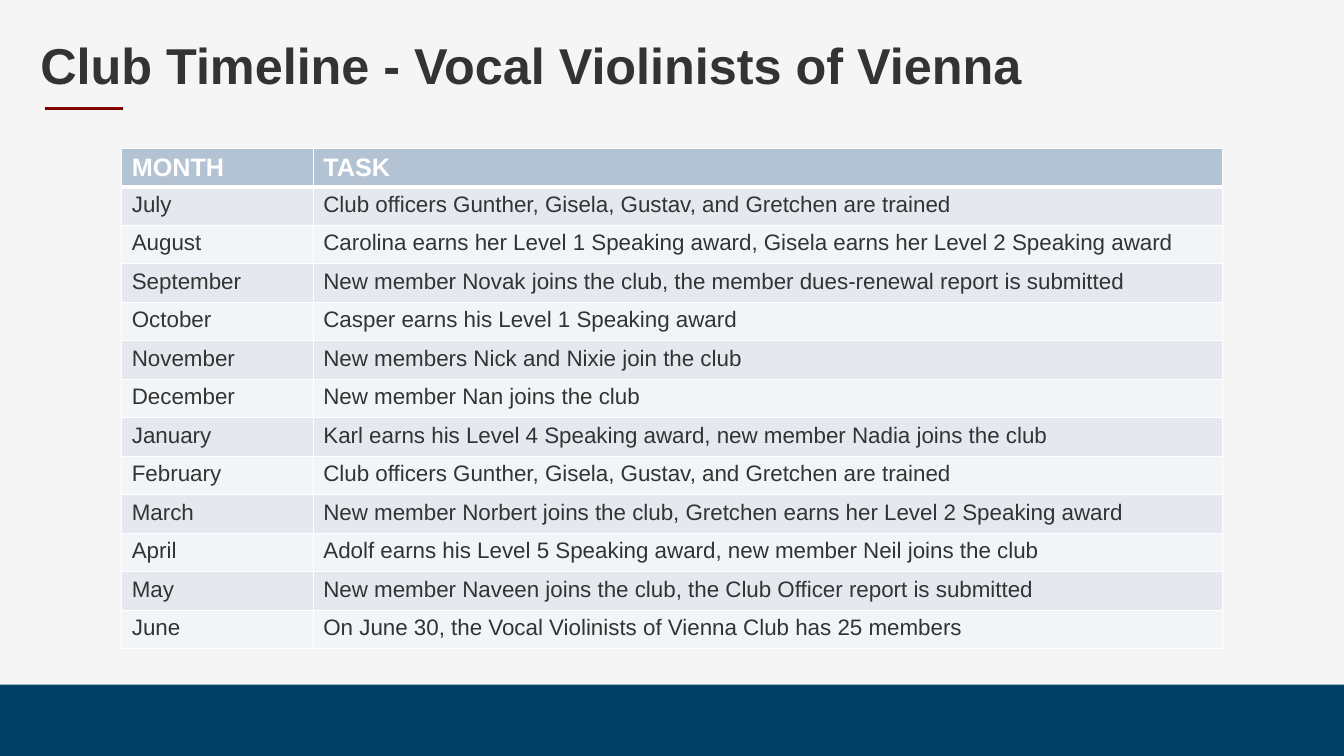
"""Build the club timeline slide."""
from lxml import etree
from pptx import Presentation
from pptx import util as u
from pptx.dml.color import RGBColor
from pptx.enum import shapes, text
from pptx.oxml import ns

PAPER = RGBColor(0xF5, 0xF5, 0xF5)
NAVY = RGBColor(0x00, 0x41, 0x65)
MAROON = RGBColor(0x80, 0x00, 0x00)
INK = RGBColor(0x33, 0x33, 0x33)
WHITE = RGBColor(0xFF, 0xFF, 0xFF)
HEADER_FILL = RGBColor(0xB3, 0xC3, 0xD3)
BAND_FILLS = (RGBColor(0xF2, 0xF5, 0xF7), RGBColor(0xE5, 0xE9, 0xEF))
FONT = "Arial"
PAGE_WIDTH, PAGE_HEIGHT = 960, 540
COLUMN_WIDTHS = (136.8, 649.4)
ROW_HEIGHT = 27.5

TIMELINE = (
    ("MONTH", "TASK"),
    ("July", "Club officers Gunther, Gisela, Gustav, and Gretchen are trained"),
    ("August", "Carolina earns her Level 1 Speaking award, Gisela earns her Level 2 Speaking award"),
    ("September", "New member Novak joins the club, the member dues-renewal report is submitted"),
    ("October", "Casper earns his Level 1 Speaking award"),
    ("November", "New members Nick and Nixie join the club"),
    ("December", "New member Nan joins the club"),
    ("January", "Karl earns his Level 4 Speaking award, new member Nadia joins the club"),
    ("February", "Club officers Gunther, Gisela, Gustav, and Gretchen are trained"),
    ("March", "New member Norbert joins the club, Gretchen earns her Level 2 Speaking award"),
    ("April", "Adolf earns his Level 5 Speaking award, new member Neil joins the club"),
    ("May", "New member Naveen joins the club, the Club Officer report is submitted"),
    ("June", "On June 30, the Vocal Violinists of Vienna Club has 25 members"),
)


def set_font(para, size, color, bold):
    """Format all the text of a paragraph."""
    para.font.name = FONT
    para.font.size = u.Pt(size)
    para.font.color.rgb = color
    para.font.bold = bold


def add_footer_band(page):
    """Draw the band along the bottom edge."""
    top = 489
    band = page.shapes.add_shape(shapes.MSO_SHAPE.RECTANGLE, 0, u.Pt(top),
                                 u.Pt(PAGE_WIDTH), u.Pt(PAGE_HEIGHT - top))
    band.shadow.inherit = False
    band.fill.solid()
    band.fill.fore_color.rgb = NAVY
    band.line.fill.background()


def add_title_rule(page):
    """Draw the short rule under the title."""
    y = u.Pt(77.8)
    rule = page.shapes.add_connector(shapes.MSO_CONNECTOR.STRAIGHT,
                                     u.Pt(32), y, u.Pt(88), y)
    rule.line.color.rgb = MAROON
    rule.line.width = u.Pt(2.25)
    etree.SubElement(rule._element.spPr, ns.qn("a:effectLst"))


def set_title(page, wording):
    """Place and format the title placeholder."""
    title = page.shapes.title
    title.left, title.top = u.Pt(21.6), u.Pt(23)
    title.width, title.height = u.Pt(917.3), u.Pt(51.1)
    frame = title.text_frame
    frame.text = wording
    frame.word_wrap = True
    frame.auto_size = text.MSO_AUTO_SIZE.NONE
    frame.vertical_anchor = text.MSO_ANCHOR.MIDDLE
    para = frame.paragraphs[0]
    para.alignment = text.PP_ALIGN.LEFT
    para.line_spacing = 0.9
    set_font(para, 36, INK, True)


def set_borders(cell, top, bottom):
    """Give a cell white borders, with the top and bottom widths in points."""
    properties = cell._tc.get_or_add_tcPr()
    for side, width in (("L", 1), ("R", 1), ("T", top), ("B", bottom)):
        edge = etree.SubElement(properties, ns.qn(f"a:ln{side}"), w=str(u.Pt(width)))
        fill = etree.SubElement(edge, ns.qn("a:solidFill"))
        etree.SubElement(fill, ns.qn("a:srgbClr"), val=str(WHITE))


def fill_cell(cell, wording, row):
    """Write and format one cell according to its row."""
    header = row == 0
    set_borders(cell, 3 if row == 1 else 1, 3 if header else 1)
    cell.fill.solid()
    cell.fill.fore_color.rgb = HEADER_FILL if header else BAND_FILLS[row % 2]
    cell.text = wording
    set_font(cell.text_frame.paragraphs[0], 18 if header else 16,
             WHITE if header else INK, header)


def add_timeline(page):
    """Add the table of months and tasks."""
    frame = page.shapes.add_table(len(TIMELINE), len(COLUMN_WIDTHS),
                                  u.Pt(87), u.Pt(106), u.Pt(sum(COLUMN_WIDTHS)),
                                  u.Pt(ROW_HEIGHT * len(TIMELINE)))
    table = frame.table
    for column, width in zip(table.columns, COLUMN_WIDTHS):
        column.width = u.Pt(width)
    for row, entry in enumerate(TIMELINE):
        table.rows[row].height = u.Pt(ROW_HEIGHT)
        for column, wording in enumerate(entry):
            fill_cell(table.cell(row, column), wording, row)


def main():
    """Build and save the deck."""
    deck = Presentation()
    deck.slide_width, deck.slide_height = u.Pt(PAGE_WIDTH), u.Pt(PAGE_HEIGHT)
    page = deck.slides.add_slide(deck.slide_layouts.get_by_name("Title Only"))
    page.background.fill.solid()
    page.background.fill.fore_color.rgb = PAPER
    add_footer_band(page)
    add_title_rule(page)
    set_title(page, "Club Timeline - Vocal Violinists of Vienna")
    add_timeline(page)
    deck.save("out.pptx")


if __name__ == "__main__":
    main()
